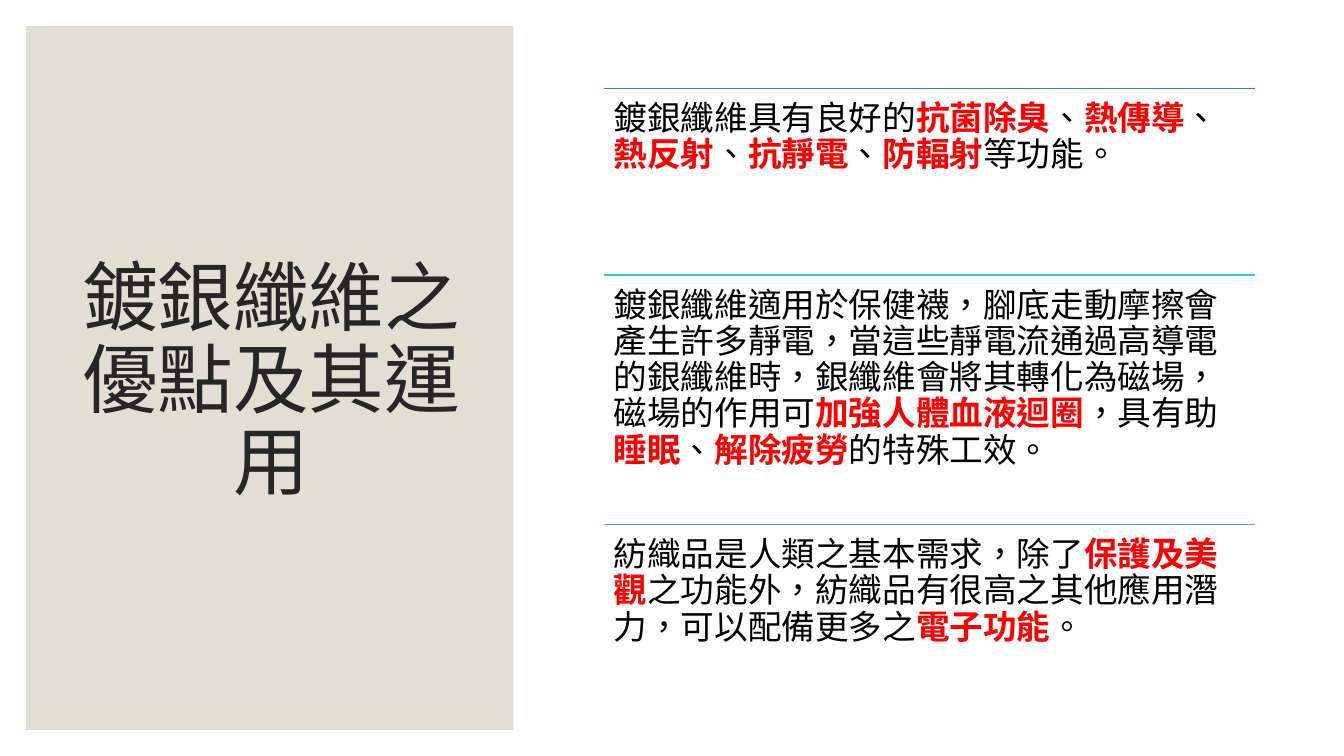
from dataclasses import dataclass

from lxml.etree import SubElement
from pptx import Presentation
from pptx.dml.color import RGBColor
from pptx.enum.lang import MSO_LANGUAGE_ID
from pptx.enum.shapes import MSO_CONNECTOR, MSO_SHAPE
from pptx.enum.text import MSO_ANCHOR, PP_ALIGN
from pptx.oxml.ns import qn
from pptx.util import Pt


@dataclass(frozen=True)
class Theme:
    panel: str = "E3DED1"
    heading: str = "262626"
    body: str = "000000"
    emphasis: str = "FF0000"
    rules: tuple = ("2683C6", "27CED7", "42BA97")
    font: str = "Noto Sans CJK SC"
    heading_size: float = 54
    heading_leading: float = 58.5
    body_size: float = 24
    body_leading: float = 25.9


class SlideBuilder:
    def __init__(self, slide, theme):
        self.slide = slide
        self.theme = theme

    def panel(self, left, top, width, height):
        panel = self.slide.shapes.add_shape(
            MSO_SHAPE.RECTANGLE, Pt(left), Pt(top), Pt(width), Pt(height)
        )
        panel.shadow.inherit = False
        panel.fill.solid()
        panel.fill.fore_color.rgb = RGBColor.from_string(self.theme.panel)
        panel.line.fill.background()

    def rule(self, left, top, width, color):
        rule = self.slide.shapes.add_connector(
            MSO_CONNECTOR.STRAIGHT, Pt(left), Pt(top), Pt(left + width), Pt(top)
        )
        rule.line.color.rgb = RGBColor.from_string(color)
        rule.line.width = Pt(1)
        SubElement(rule._element.spPr, qn("a:effectLst"))

    def text(self, content, bounds, size, color, frame_format, paragraph_format):
        box = self.slide.shapes.add_textbox(*map(Pt, bounds))
        frame = box.text_frame
        for name, value in {"word_wrap": True, **frame_format}.items():
            setattr(frame, name, value)
        paragraph = frame.paragraphs[0]
        for name, value in paragraph_format.items():
            setattr(paragraph, name, value)
        for index, part in enumerate(content.split("*")):
            emphasized = index % 2 == 1
            run = paragraph.add_run()
            run.text = part
            run.font.color.rgb = RGBColor.from_string(
                self.theme.emphasis if emphasized else color
            )
            font_format = {
                "name": self.theme.font,
                "size": Pt(size),
                "bold": emphasized,
                "language_id": MSO_LANGUAGE_ID.TRADITIONAL_CHINESE,
            }
            for name, value in font_format.items():
                setattr(run.font, name, value)
            east_asian = SubElement(run._r.get_or_add_rPr(), qn("a:ea"))
            east_asian.set("typeface", self.theme.font)

    def heading(self, content, bounds):
        self.text(
            content, bounds, self.theme.heading_size, self.theme.heading,
            {"vertical_anchor": MSO_ANCHOR.MIDDLE, "margin_top": Pt(12)},
            {"alignment": PP_ALIGN.CENTER,
             "line_spacing": Pt(self.theme.heading_leading)},
        )

    def benefit(self, content, left, top, width, height, rule_color):
        self.rule(left, top, width, rule_color)
        self.text(
            content, (left, top, width, height),
            self.theme.body_size, self.theme.body,
            {"vertical_anchor": MSO_ANCHOR.TOP, "margin_top": Pt(9)},
            {"alignment": PP_ALIGN.LEFT,
             "line_spacing": Pt(self.theme.body_leading)},
        )


BENEFITS = (
    (63.2, 133,
     "鍍銀纖維具有良好的*抗菌除臭*、*熱傳導*、*熱反射*、*抗靜電*、*防輻射*等功能。"),
    (196.4, 178.5,
     "鍍銀纖維適用於保健襪，腳底走動摩擦會產生許多靜電，當這些靜電流通過高導電的銀纖維時，"
     "銀纖維會將其轉化為磁場，磁場的作用可*加強人體血液迴圈*，具有助*睡眠*、*解除疲勞*的特殊工效。"),
    (374.6, 133,
     "紡織品是人類之基本需求，除了*保護及美觀*之功能外，紡織品有很高之其他應用潛力，"
     "可以配備更多之*電子功能*。"),
)


def main():
    presentation = Presentation()
    presentation.slide_width = Pt(960)
    presentation.slide_height = Pt(540)
    theme = Theme()
    slide = presentation.slides.add_slide(presentation.slide_layouts[6])
    builder = SlideBuilder(slide, theme)
    builder.panel(18.7, 18.7, 348, 502.6)
    builder.heading("鍍銀纖維之優點及其運用", (45.4, 44, 296.6, 449.3))
    for (top, height, content), color in zip(BENEFITS, theme.rules):
        builder.benefit(content, 431.3, top, 465, height, color)
    presentation.save("out.pptx")


if __name__ == "__main__":
    main()
